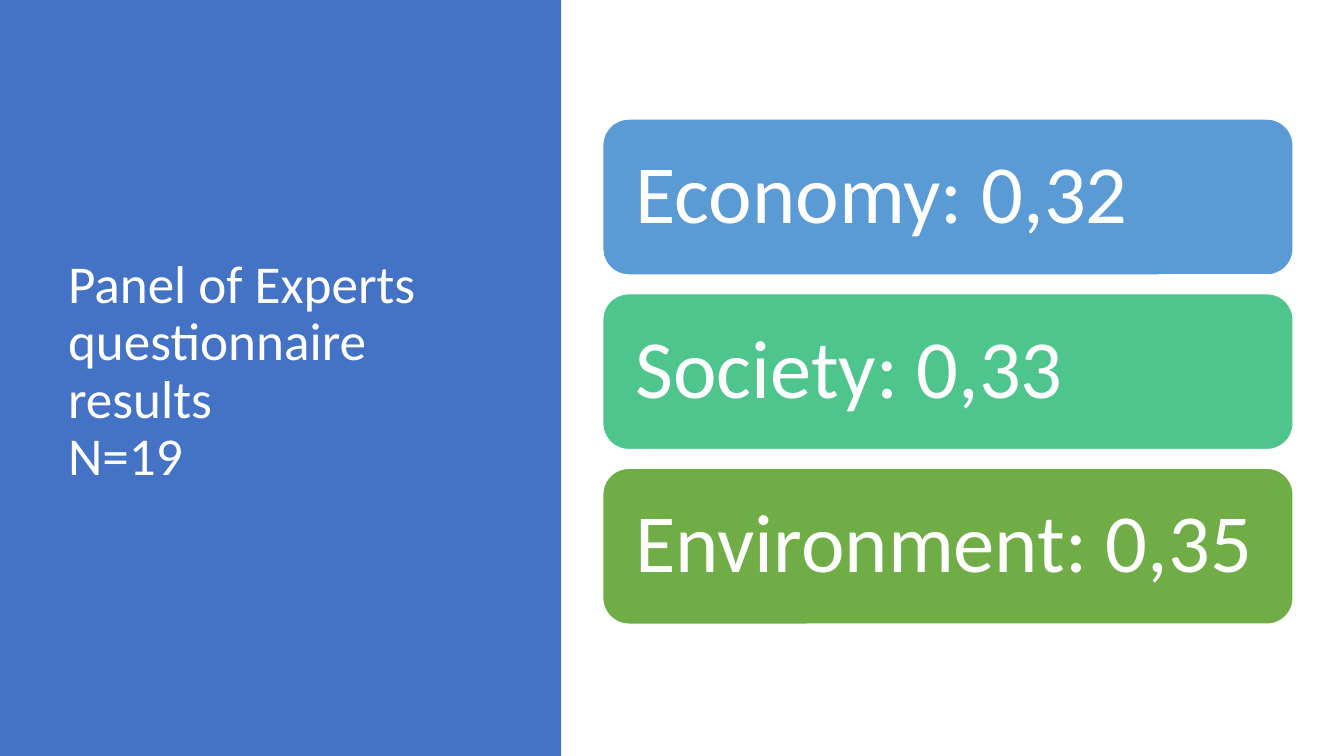
from pptx import Presentation
from pptx.dml.color import RGBColor
from pptx.enum.shapes import MSO_SHAPE as SHAPE
from pptx.enum.text import MSO_ANCHOR as ANCHOR, MSO_AUTO_SIZE as AUTO, PP_ALIGN as ALIGN
from pptx.util import Cm, Pt

TITLE = "Panel of Experts questionnaire results\nN=19"
RESULTS = [
    ("Economy: 0,32", "economy"),
    ("Society: 0,33", "society"),
    ("Environment: 0,35", "environment"),
]
COLORS = {
    "panel": "4472C4",
    "economy": "5B9BD5",
    "society": "4DC58D",
    "environment": "70AD47",
    "white": "FFFFFF",
}
FONT = "Calibri"
SLIDE_W, SLIDE_H = 33.87, 19.05
PANEL_W = 14.14
CARD_X, CARD_Y, CARD_W, CARD_H = 15.19, 3.0, 17.4, 3.93
CARD_STEP = 4.4
CARD_INSET = 0.63


def rgb(name):
    return RGBColor.from_string(COLORS[name])


def add_box(s, kind, x, y, w, h, color):
    sp = s.shapes.add_shape(kind, Cm(x), Cm(y), Cm(w), Cm(h))
    sp.shadow.inherit = False
    sp.fill.solid()
    sp.fill.fore_color.rgb = rgb(color)
    sp.line.fill.background()
    return sp


def set_text(sp, text, size):
    tf = sp.text_frame
    tf.text = text
    tf.word_wrap = True
    tf.auto_size = AUTO.NONE
    tf.vertical_anchor = ANCHOR.MIDDLE
    for p in tf.paragraphs:
        p.alignment = ALIGN.LEFT
        p.line_spacing = 0.9
        for r in p.runs:
            r.font.name = FONT
            r.font.size = Pt(size)
            r.font.color.rgb = rgb("white")
    return tf


def main():
    prs = Presentation()
    prs.slide_width, prs.slide_height = Cm(SLIDE_W), Cm(SLIDE_H)
    s = prs.slides.add_slide(prs.slide_layouts[5])

    panel = add_box(s, SHAPE.RECTANGLE, 0, 0, PANEL_W, SLIDE_H, "panel")
    title = s.shapes.title
    title.element.addprevious(panel.element)
    title.left, title.top = Cm(1.46), Cm(1.73)
    title.width, title.height = Cm(10.57), Cm(15.29)
    set_text(title, TITLE, 38)

    for i, (text, color) in enumerate(RESULTS):
        card = add_box(s, SHAPE.ROUNDED_RECTANGLE, CARD_X, CARD_Y + i * CARD_STEP,
                       CARD_W, CARD_H, color)
        card.line.color.rgb = rgb("white")
        card.line.width = Pt(1)
        tf = set_text(card, text, 59)
        tf.margin_left = Cm(CARD_INSET)
        tf.margin_right = 0

    prs.save("out.pptx")


if __name__ == "__main__":
    main()
